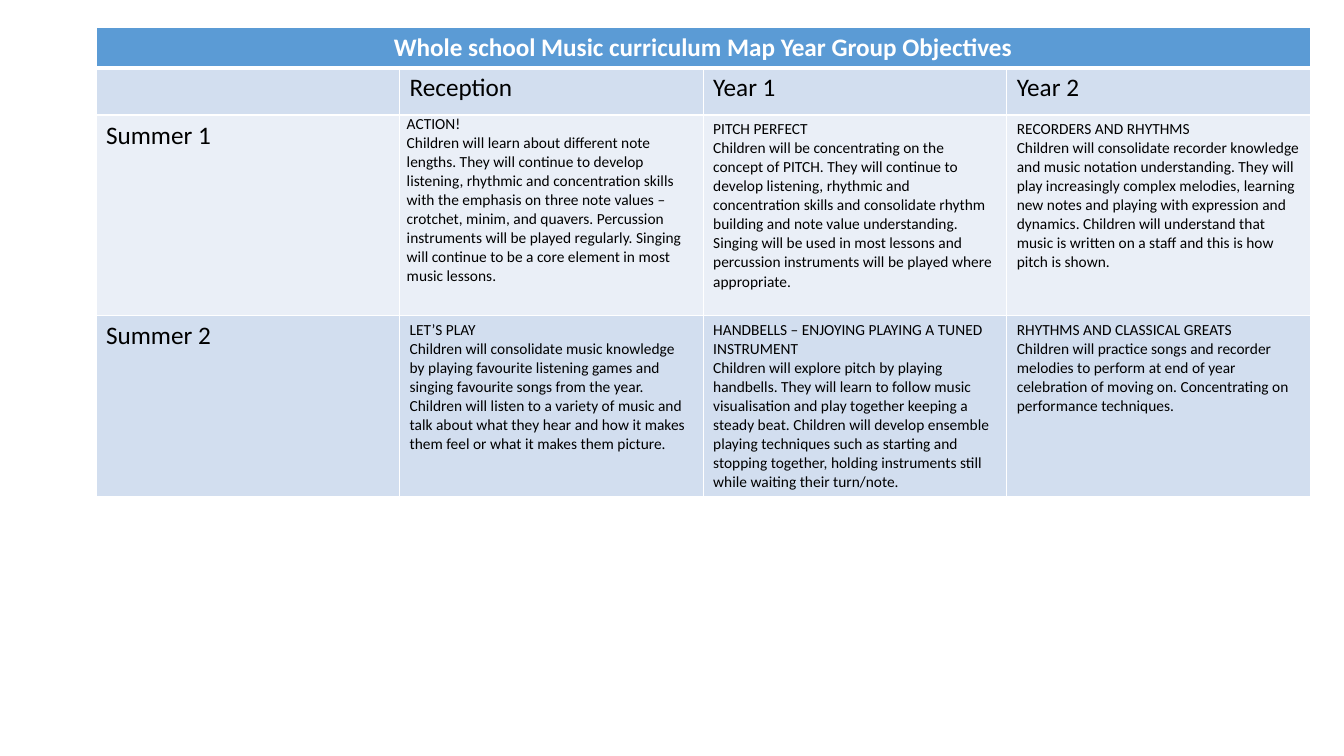
from lxml import etree
from pptx import Presentation
from pptx.dml.color import RGBColor
from pptx.enum.text import PP_ALIGN
from pptx.oxml.ns import qn
from pptx.util import Cm, Pt

TITLE_BLUE, BAND_BLUE, PALE_BLUE = "5B9BD5", "D2DEEF", "EAEFF7"
ROW_FILLS = [TITLE_BLUE, BAND_BLUE, PALE_BLUE, BAND_BLUE]
ROW_HEIGHTS = [1.02, 1.19, 5.05, 4.55]
COLUMN_WIDTH = 7.65

ROWS = [
    ["Whole school Music curriculum Map Year Group Objectives", "", "", ""],
    ["", "Reception", "Year 1", "Year 2"],
    [
        "Summer 1",
        "ACTION!\nChildren will learn about different note lengths. They will continue "
        "to develop listening, rhythmic and concentration skills with the emphasis on "
        "three note values – crotchet, minim, and quavers. Percussion instruments will "
        "be played regularly. Singing will continue to be a core element in most music "
        "lessons.",
        "PITCH PERFECT\nChildren will be concentrating on the concept of PITCH. They "
        "will continue to develop listening, rhythmic and concentration skills and "
        "consolidate rhythm building and note value understanding. Singing will be used "
        "in most lessons and percussion instruments will be played where appropriate.",
        "RECORDERS AND RHYTHMS\nChildren will consolidate recorder knowledge and music "
        "notation understanding. They will play increasingly complex melodies, learning "
        "new notes and playing with expression and dynamics. Children will understand "
        "that music is written on a staff and this is how pitch is shown.",
    ],
    [
        "Summer 2",
        "LET’S PLAY\nChildren will consolidate music knowledge by playing favourite "
        "listening games and singing favourite songs from the year. Children will listen "
        "to a variety of music and talk about what they hear and how it makes them feel "
        "or what it makes them picture.",
        "HANDBELLS – ENJOYING PLAYING A TUNED INSTRUMENT\nChildren will explore pitch by "
        "playing handbells. They will learn to follow music visualisation and play "
        "together keeping a steady beat. Children will develop ensemble playing "
        "techniques such as starting and stopping together, holding instruments still "
        "while waiting their turn/note.",
        "RHYTHMS AND CLASSICAL GREATS\nChildren will practice songs and recorder melodies "
        "to perform at end of year celebration of moving on. Concentrating on "
        "performance techniques.",
    ],
]


def color(value):
    return RGBColor.from_string(value)


def set_borders(cell, widths):
    """Draw white borders; widths are points for left, right, top and bottom."""
    properties = cell._tc.get_or_add_tcPr()
    for place, (side, width) in enumerate(zip("LRTB", widths)):
        line = etree.Element(qn(f"a:ln{side}"), w=str(Pt(width)))
        fill = etree.SubElement(line, qn("a:solidFill"))
        etree.SubElement(fill, qn("a:srgbClr"), val="FFFFFF")
        properties.insert(place, line)


deck = Presentation()
deck.slide_width, deck.slide_height = Cm(33.87), Cm(19.05)
page = deck.slides.add_slide(deck.slide_layouts[6])

frame = page.shapes.add_table(
    4, 4, Cm(2.42), Cm(0.68), Cm(4 * COLUMN_WIDTH), Cm(sum(ROW_HEIGHTS))
)
table = frame.table
for column in table.columns:
    column.width = Cm(COLUMN_WIDTH)
for row, height in zip(table.rows, ROW_HEIGHTS):
    row.height = Cm(height)
table.cell(0, 0).merge(table.cell(0, 3))

for row_index, texts in enumerate(ROWS):
    is_title = row_index == 0
    for column_index, text in enumerate(texts):
        cell = table.cell(row_index, column_index)
        cell.fill.solid()
        cell.fill.fore_color.rgb = color(ROW_FILLS[row_index])
        set_borders(cell, [1, 1, 3 if row_index == 1 else 1, 3 if is_title else 1])
        cell.text = text
        is_objective = row_index > 1 and column_index > 0
        for para in cell.text_frame.paragraphs:
            para.alignment = PP_ALIGN.CENTER if is_title else PP_ALIGN.LEFT
            para.font.name = "Calibri"
            para.font.size = Pt(11 if is_objective else 18)
            para.font.bold = is_title
            para.font.color.rgb = color("FFFFFF" if is_title else "000000")

action_cell = table.cell(2, 1)
action_cell.margin_left = action_cell.margin_right = Cm(0.18)
action_cell.margin_top = action_cell.margin_bottom = Cm(0)

deck.save("out.pptx")
